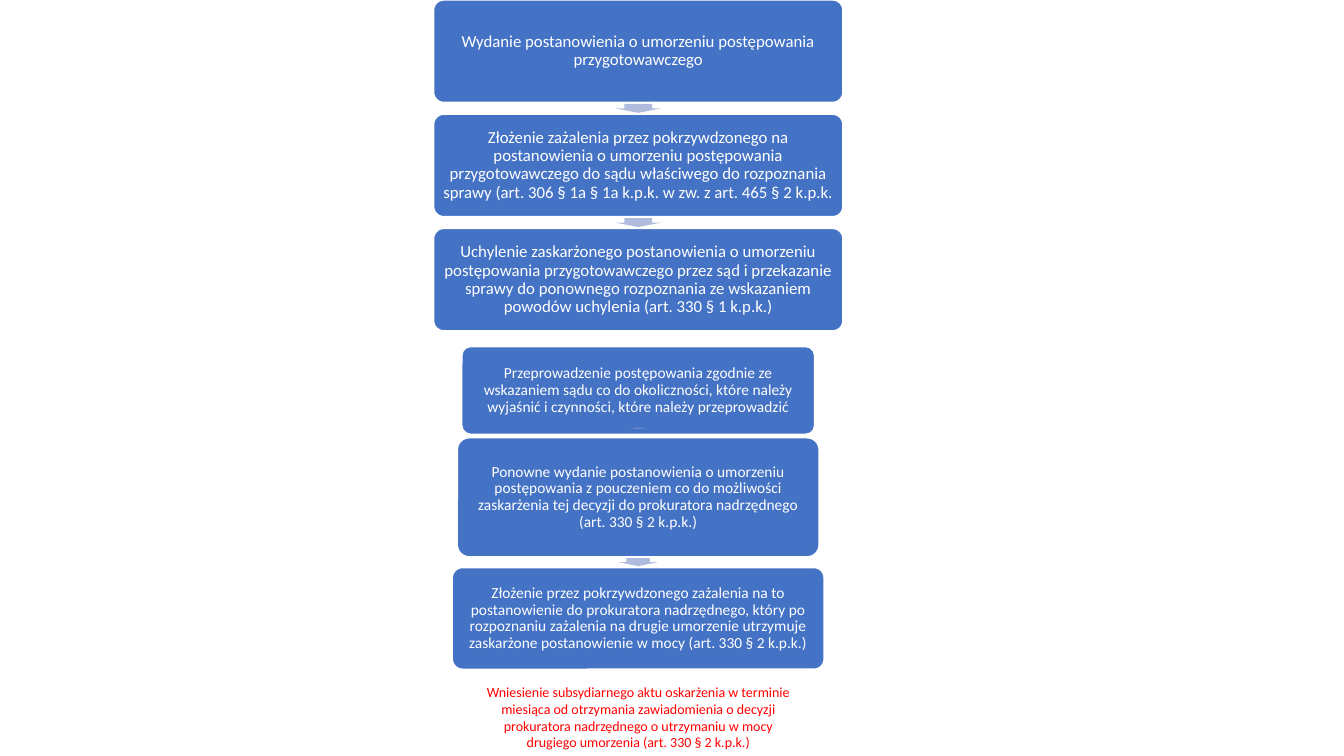
"""Build a one-slide flow of steps leading to a subsidiary indictment."""
from dataclasses import dataclass

from pptx import Presentation
from pptx.dml.color import RGBColor
from pptx.enum.shapes import MSO_SHAPE
from pptx.enum.text import MSO_ANCHOR, PP_ALIGN
from pptx.util import Pt


@dataclass(frozen=True)
class Theme:
    font: str = "Calibri"
    box: RGBColor = RGBColor(0x44, 0x72, 0xC4)
    arrow: RGBColor = RGBColor(0xB0, 0xBC, 0xDE)
    light: RGBColor = RGBColor(0xFF, 0xFF, 0xFF)
    accent: RGBColor = RGBColor(0xFF, 0x00, 0x00)
    large: float = 12
    medium: float = 11
    small: float = 10


class FlowSlide:
    def __init__(self, slide, theme, center):
        self.slide = slide
        self.theme = theme
        self.center = center

    def set_text(self, shape, text, size, color, spacing=1.0):
        frame = shape.text_frame
        frame.text = text
        frame.word_wrap = True
        paragraph = frame.paragraphs[0]
        paragraph.alignment = PP_ALIGN.CENTER
        paragraph.line_spacing = spacing
        font = paragraph.runs[0].font
        font.name = self.theme.font
        font.size = Pt(size)
        font.color.rgb = color

    def centered_shape(self, kind, top, width, height, color):
        shape = self.slide.shapes.add_shape(
            kind, Pt(self.center - width / 2), Pt(top), Pt(width), Pt(height))
        shape.shadow.inherit = False
        shape.fill.solid()
        shape.fill.fore_color.rgb = color
        return shape

    def step(self, text, top, width, height, size):
        box = self.centered_shape(
            MSO_SHAPE.ROUNDED_RECTANGLE, top, width, height, self.theme.box)
        box.adjustments[0] = 0.1
        box.line.color.rgb = self.theme.light
        box.line.width = Pt(1)
        frame = box.text_frame
        frame.margin_left = frame.margin_right = Pt(3.6)
        frame.margin_top = frame.margin_bottom = Pt(3.6)
        frame.vertical_anchor = MSO_ANCHOR.MIDDLE
        self.set_text(box, text, size, self.theme.light, spacing=0.9)

    def arrow(self, middle, width, height):
        arrow = self.centered_shape(
            MSO_SHAPE.DOWN_ARROW, middle - height / 2, width, height, self.theme.arrow)
        arrow.adjustments[0] = 0.6
        arrow.adjustments[1] = 0.5
        arrow.line.fill.background()

    def note(self, text, top, width, height):
        box = self.slide.shapes.add_textbox(
            Pt(self.center - width / 2), Pt(top), Pt(width), Pt(height))
        self.set_text(box, text, self.theme.small, self.theme.accent)


COURT_STEPS = [
    "Wydanie postanowienia o umorzeniu postępowania przygotowawczego",
    "Złożenie zażalenia przez pokrzywdzonego na postanowienia o umorzeniu "
    "postępowania przygotowawczego do sądu właściwego do rozpoznania sprawy "
    "(art. 306 § 1a § 1a k.p.k. w zw. z art. 465 § 2 k.p.k.",
    "Uchylenie zaskarżonego postanowienia o umorzeniu postępowania "
    "przygotowawczego przez sąd i przekazanie sprawy do ponownego rozpoznania "
    "ze wskazaniem powodów uchylenia (art. 330 § 1 k.p.k.)",
]
PROSECUTOR_STEPS = [
    ("Przeprowadzenie postępowania zgodnie ze wskazaniem sądu co do okoliczności, "
     "które należy wyjaśnić i czynności, które należy przeprowadzić",
     247.6, 252, 62.6),
    ("Ponowne wydanie postanowienia o umorzeniu postępowania z pouczeniem co do "
     "możliwości zaskarżenia tej decyzji do prokuratora nadrzędnego "
     "(art. 330 § 2 k.p.k.)",
     312.7, 258.4, 85),
    ("Złożenie przez pokrzywdzonego zażalenia na to postanowienie do prokuratora "
     "nadrzędnego, który po rozpoznaniu zażalenia na drugie umorzenie utrzymuje "
     "zaskarżone postanowienie w mocy (art. 330 § 2 k.p.k.)",
     405.4, 265.6, 72.6),
]
CLOSING_NOTE = (
    "Wniesienie subsydiarnego aktu oskarżenia w terminie miesiąca od otrzymania "
    "zawiadomienia o decyzji prokuratora nadrzędnego o utrzymaniu w mocy drugiego "
    "umorzenia (art. 330 § 2 k.p.k.)")
COURT_PITCH = 81.6
COURT_HEIGHT = 73.2


def main():
    presentation = Presentation()
    presentation.slide_width = Pt(960)
    presentation.slide_height = Pt(540)
    theme = Theme()
    slide = presentation.slides.add_slide(presentation.slide_layouts[6])
    flow = FlowSlide(slide, theme, center=455.9)

    for index, text in enumerate(COURT_STEPS):
        top = index * COURT_PITCH
        if index:
            flow.arrow(top - (COURT_PITCH - COURT_HEIGHT) / 2, 33, 6.4)
        flow.step(text, top, 292.4, COURT_HEIGHT, theme.large)

    for text, top, width, height in PROSECUTOR_STEPS:
        flow.step(text, top, width, height, theme.medium)
    flow.arrow(305.8, 12.2, 0.3)
    flow.arrow(401.5, 28, 5.8)

    flow.note(CLOSING_NOTE, 484.6, 232.6, 55.4)
    presentation.save("out.pptx")


if __name__ == "__main__":
    main()
